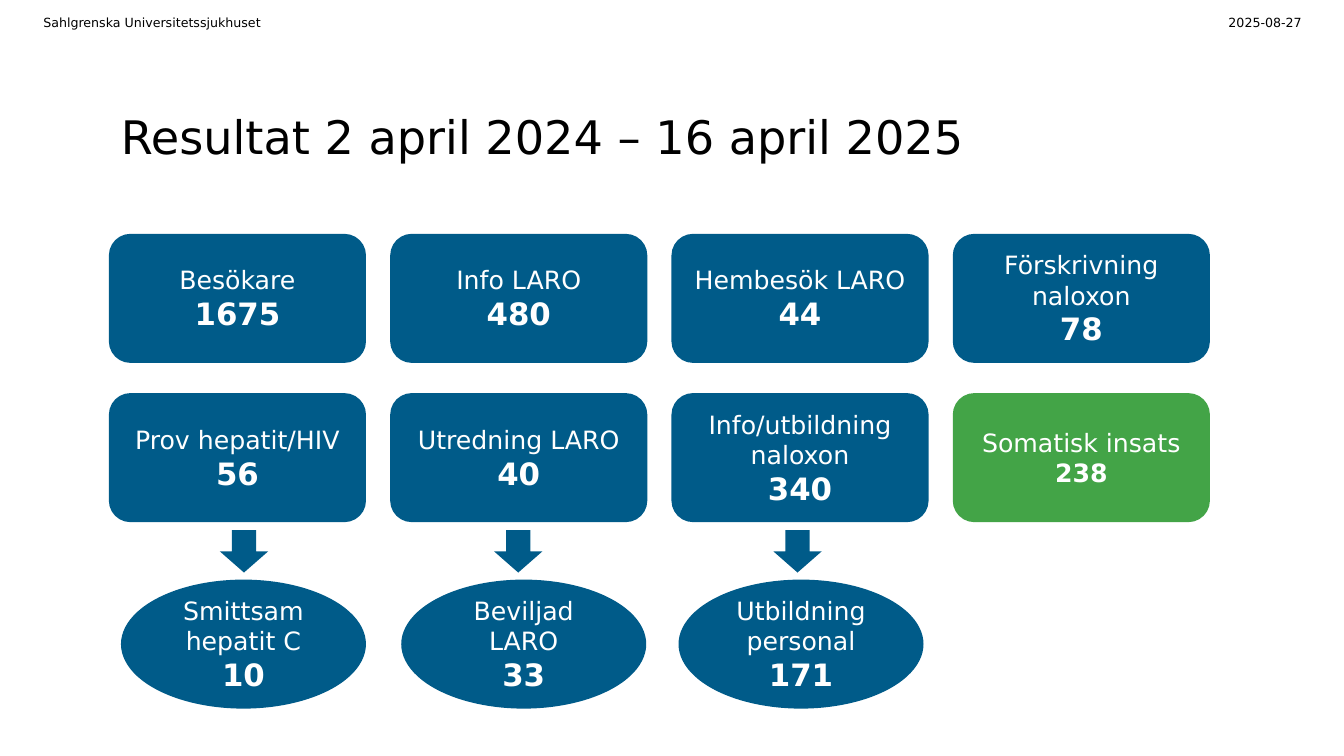
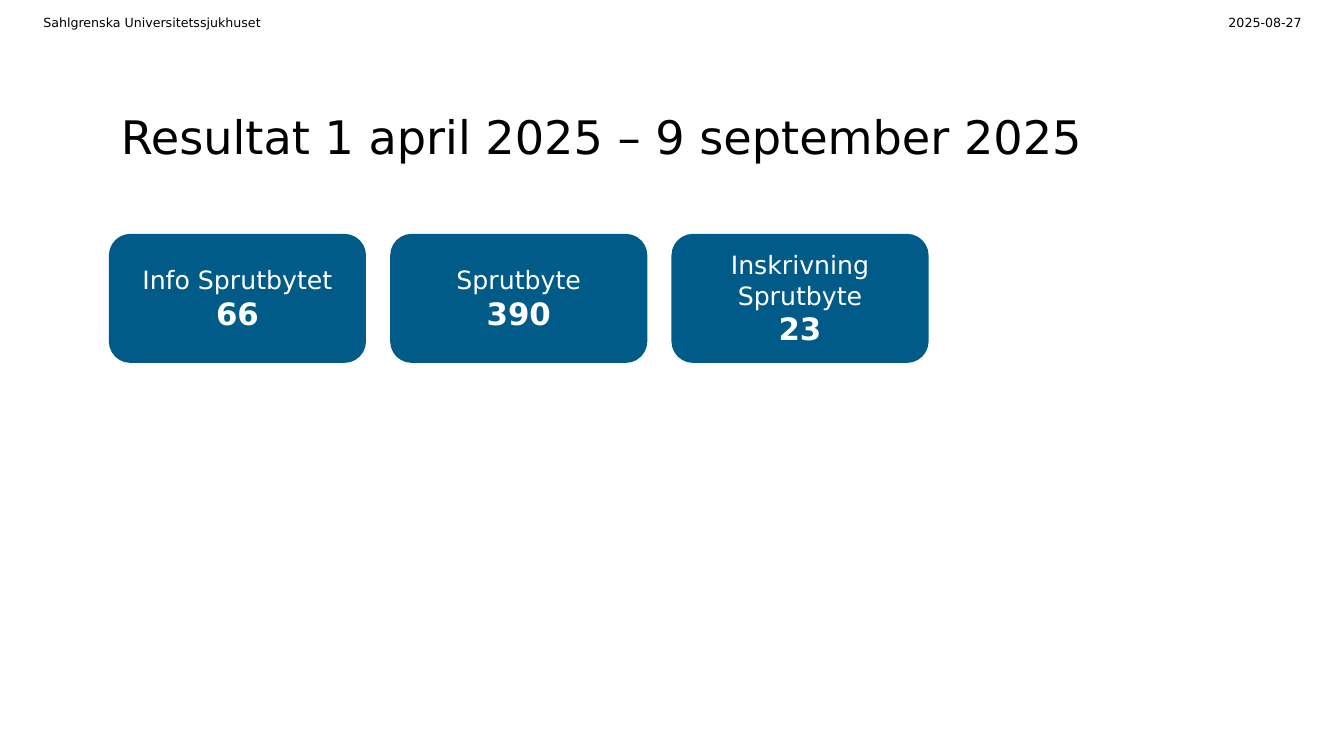
from pptx import Presentation
from pptx.dml.color import RGBColor
from pptx.enum.shapes import MSO_SHAPE as SHAPE
from pptx.enum.text import MSO_ANCHOR as ANCHOR, MSO_AUTO_SIZE as AUTO_SIZE, PP_ALIGN as ALIGN
from pptx.util import Inches, Pt

COLORS = {"blue": "005B89", "green": "43A447", "white": "FFFFFF", "black": "000000"}
FONT = "DejaVu Sans"
CARD_LEFT, CARD_TOP = 1.08, 2.32
CARD_W, CARD_H = 2.55, 1.28
COL_STEP, ROW_STEP = 2.79, 1.58


class Deck:
    def __init__(self):
        self.prs = Presentation()
        self.prs.slide_width = Inches(13.33)
        self.prs.slide_height = Inches(7.5)
        self.s = None

    def slide(self, title):
        self.s = self.prs.slides.add_slide(self.prs.slide_layouts[5])
        self.title(title)
        self.text("2025-08-27", 11.92, 0.99, ALIGN.RIGHT)
        self.text("Sahlgrenska Universitetssjukhuset", 0.43, 4.51, ALIGN.LEFT)

    def style(self, p, size, color, align, bold=False):
        p.alignment = align
        for r in p.runs:
            r.font.name = FONT
            r.font.size = Pt(size)
            r.font.bold = bold
            r.font.color.rgb = RGBColor.from_string(COLORS[color])

    def frame(self, sp, text, anchor):
        tf = sp.text_frame
        tf.text = text
        tf.word_wrap = True
        tf.auto_size = AUTO_SIZE.NONE
        tf.vertical_anchor = anchor
        tf.margin_left = tf.margin_top = tf.margin_right = tf.margin_bottom = 0
        return tf.paragraphs[0]

    def title(self, text):
        sp = self.s.shapes.title
        sp.left, sp.top, sp.width, sp.height = map(Inches, (1.2, 0.47, 10.57, 1.15))
        self.style(self.frame(sp, text, ANCHOR.BOTTOM), 33, "black", ALIGN.LEFT)

    def text(self, text, left, width, align):
        sp = self.s.shapes.add_textbox(*map(Inches, (left, 0.15, width, 0.15)))
        self.style(self.frame(sp, text, ANCHOR.MIDDLE), 9, "black", align)

    def shape(self, kind, left, top, width, height, color="blue"):
        sp = self.s.shapes.add_shape(kind, *map(Inches, (left, top, width, height)))
        sp.shadow.inherit = False
        sp.fill.solid()
        sp.fill.fore_color.rgb = RGBColor.from_string(COLORS[color])
        sp.line.fill.background()
        return sp

    def figure(self, sp, label, value, size=22):
        tf = sp.text_frame
        tf.word_wrap = True
        tf.vertical_anchor = ANCHOR.MIDDLE
        tf.text = f"{label}\n{value}"
        self.style(tf.paragraphs[0], 18, "white", ALIGN.CENTER)
        self.style(tf.paragraphs[1], size, "white", ALIGN.CENTER, bold=True)

    def card(self, col, row, label, value, color="blue", size=22):
        sp = self.shape(SHAPE.ROUNDED_RECTANGLE, CARD_LEFT + col * COL_STEP,
                        CARD_TOP + row * ROW_STEP, CARD_W, CARD_H, color)
        self.figure(sp, label, value, size)

    def cards(self, row, items):
        for col, item in enumerate(items):
            self.card(col, row, *item)

    def outcome(self, arrow_left, left, label, value):
        self.shape(SHAPE.DOWN_ARROW, arrow_left, 5.26, 0.48, 0.42)
        sp = self.shape(SHAPE.OVAL, left, 5.75, 2.43, CARD_H)
        self.figure(sp, label, value)


def main():
    deck = Deck()

    deck.slide("Resultat 2 april 2024 – 16 april 2025")
    deck.cards(0, [("Besökare", 1675), ("Info LARO", 480),
                   ("Hembesök LARO", 44), ("Förskrivning naloxon", 78)])
    deck.cards(1, [("Prov hepatit/HIV", 56), ("Utredning LARO", 40),
                   ("Info/utbildning naloxon", 340),
                   ("Somatisk insats", 238, "green", 18)])
    for outcome in [(2.18, 1.2, "Smittsam hepatit C", 10),
                    (4.9, 3.98, "Beviljad LARO", 33),
                    (7.67, 6.73, "Utbildning personal", 171)]:
        deck.outcome(*outcome)

    deck.slide("Resultat 1 april 2025 – 9 september 2025")
    deck.cards(0, [("Info Sprutbytet", 66), ("Sprutbyte", 390),
                   ("Inskrivning Sprutbyte", 23)])

    deck.prs.save("out.pptx")


if __name__ == "__main__":
    main()
